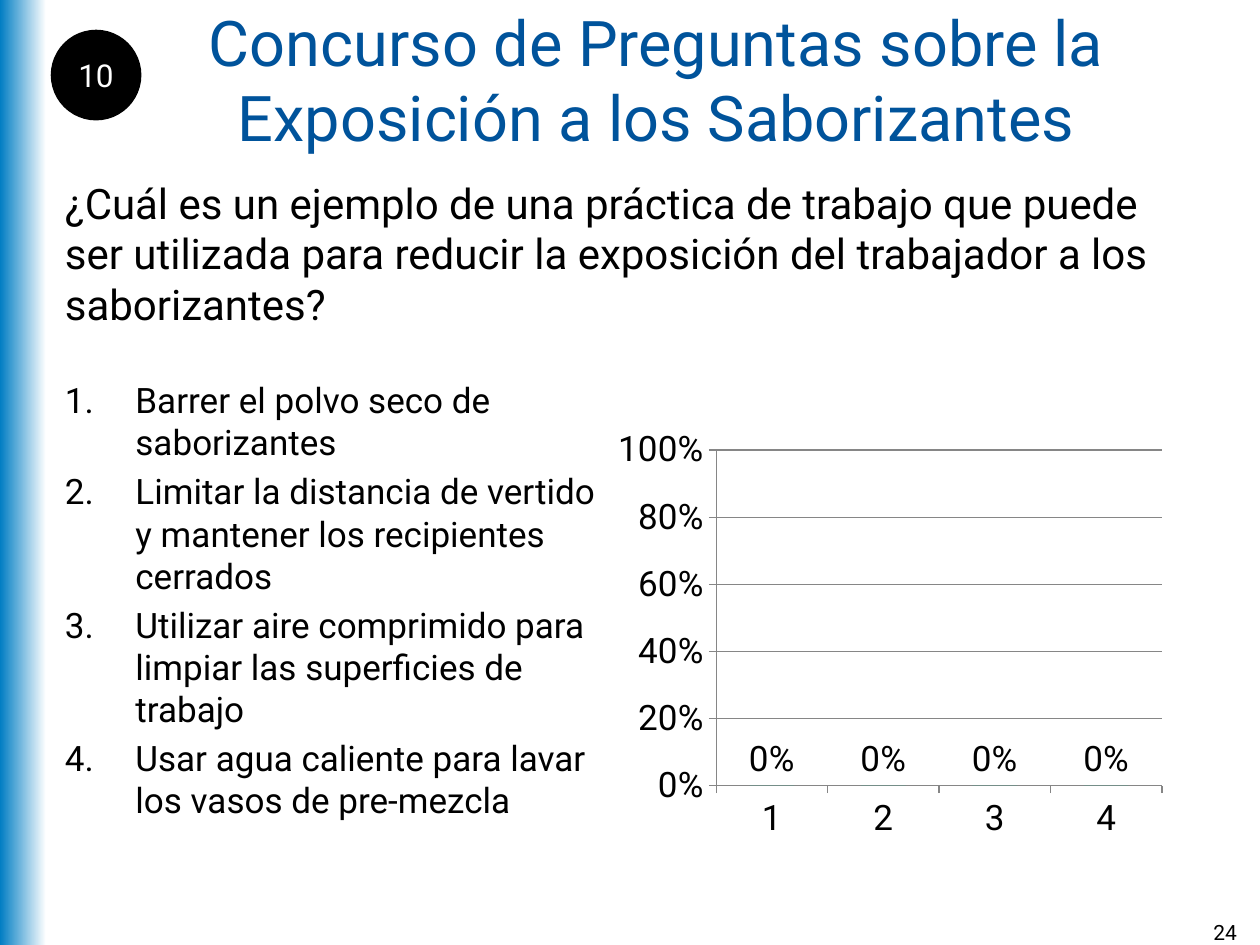
import pptx
import pptx.chart.data
import pptx.dml.color
import pptx.enum.chart
import pptx.enum.shapes
import pptx.enum.text
import pptx.oxml
import pptx.oxml.ns
import pptx.util

COLS, ROWS = 24, 18
FONT = "Roboto"
BLACK, WHITE, GREY = "000000", "FFFFFF", "868686"
SKY, NAVY, GREEN = "007DC3", "00539B", "00CC99"
ALIGN = pptx.enum.text.PP_ALIGN
ANCHOR = pptx.enum.text.MSO_ANCHOR
SHAPE = pptx.enum.shapes.MSO_SHAPE

TITLE = "Concurso de Preguntas sobre la Exposición a los Saborizantes"
QUESTION = (
    "¿Cuál es un ejemplo de una práctica de trabajo que puede ser utilizada "
    "para reducir la exposición del trabajador a los saborizantes?"
)
ANSWERS = [
    "Barrer el polvo seco de saborizantes",
    "Limitar la distancia de vertido y mantener los recipientes cerrados",
    "Utilizar aire comprimido para limpiar las superficies de trabajo",
    "Usar agua caliente para lavar los vasos de pre-mezcla",
]


def rgb(value):
    return pptx.dml.color.RGBColor.from_string(value)


def style_font(font, size, color=BLACK):
    font.name, font.size = FONT, pptx.util.Pt(size)
    font.color.rgb = rgb(color)


def write(tf, text, size=20, color=BLACK, align=ALIGN.LEFT, before=0, first=True):
    p = tf.paragraphs[0] if first else tf.add_paragraph()
    p.alignment, p.space_before = align, pptx.util.Pt(before)
    r = p.add_run()
    r.text = text
    style_font(r.font, size, color)
    return p


class Deck:
    def __init__(self, width=10, height=7.5):
        self.prs = pptx.Presentation()
        self.prs.slide_width = pptx.util.Inches(width)
        self.prs.slide_height = pptx.util.Inches(height)
        self.s = self.prs.slides.add_slide(self.prs.slide_layouts[6])

    def box(self, col, row, cols, rows):
        dx, dy = self.prs.slide_width / COLS, self.prs.slide_height / ROWS
        return [round(v) for v in (col * dx, row * dy, cols * dx, rows * dy)]

    def shape(self, kind, *area):
        sp = self.s.shapes.add_shape(kind, *self.box(*area))
        sp.shadow.inherit = False
        return sp

    def band(self, *area, start, end):
        sp = self.shape(SHAPE.RECTANGLE, *area)
        sp.line.fill.background()
        sp.fill.gradient()
        sp.fill.gradient_angle = 0
        for stop, position, color in zip(sp.fill.gradient_stops, (0, 1), (start, end)):
            stop.position, stop.color.rgb = position, rgb(color)

    def badge(self, *area, text):
        sp = self.shape(SHAPE.OVAL, *area)
        sp.fill.solid()
        sp.fill.fore_color.rgb = sp.line.color.rgb = rgb(BLACK)
        sp.line.width = pptx.util.Pt(2)
        tf = sp.text_frame
        tf.margin_left = tf.margin_right = tf.margin_top = tf.margin_bottom = 0
        tf.word_wrap, tf.vertical_anchor = False, ANCHOR.MIDDLE
        write(tf, text, size=18, color=WHITE, align=ALIGN.CENTER)

    def text_frame(self, *area, anchor=ANCHOR.TOP):
        tf = self.s.shapes.add_textbox(*self.box(*area)).text_frame
        tf.word_wrap, tf.vertical_anchor = True, anchor
        return tf

    def text(self, *area, text, anchor=ANCHOR.TOP, **kw):
        write(self.text_frame(*area, anchor=anchor), text, **kw)

    def numbered(self, *area, items, indent=0.56, **kw):
        tf = self.text_frame(*area)
        for i, item in enumerate(items):
            p_pr = write(tf, item, first=i == 0, **kw)._p.get_or_add_pPr()
            p_pr.set("marL", str(pptx.util.Inches(indent)))
            p_pr.set("indent", str(pptx.util.Inches(-indent)))
            bullet = pptx.oxml.parse_xml(
                f'<a:buAutoNum {pptx.oxml.ns.nsdecls("a")} type="arabicPeriod"/>'
            )
            p_pr.append(bullet)

    def percent_chart(self, *area, cats, vals, plot):
        data = pptx.chart.data.CategoryChartData(number_format="0%")
        data.categories = cats
        data.add_series("Series 1", vals)
        kind = pptx.enum.chart.XL_CHART_TYPE.COLUMN_CLUSTERED
        chart = self.s.shapes.add_chart(kind, *self.box(*area), data).chart
        chart.has_title = chart.has_legend = False
        style_font(chart.font, 20)
        for axis in (chart.category_axis, chart.value_axis):
            axis.major_tick_mark = pptx.enum.chart.XL_TICK_MARK.OUTSIDE
            axis.format.line.color.rgb = rgb(GREY)
        axis = chart.value_axis
        axis.minimum_scale, axis.maximum_scale, axis.major_unit = 0, 1, 0.2
        axis.has_major_gridlines = True
        axis.major_gridlines.format.line.color.rgb = rgb(GREY)
        axis.tick_labels.number_format = "0%"
        axis.tick_labels.number_format_is_linked = False
        bars = chart.plots[0]
        bars.gap_width, bars.vary_by_categories = 150, False
        series = bars.series[0]
        series.format.fill.solid()
        series.format.fill.fore_color.rgb = rgb(GREEN)
        labels = series.data_labels
        labels.show_value = True
        labels.number_format, labels.number_format_is_linked = "0%", False
        labels.position = pptx.enum.chart.XL_LABEL_POSITION.OUTSIDE_END
        style_font(labels.font, 20)
        self.place_plot(chart, plot)

    def place_plot(self, chart, plot):
        sizes = "".join(f'<c:{k} val="{v}"/>' for k, v in zip("xywh", plot))
        layout = pptx.oxml.parse_xml(
            f'<c:layout {pptx.oxml.ns.nsdecls("c")}><c:manualLayout>'
            '<c:layoutTarget val="inner"/><c:xMode val="edge"/><c:yMode val="edge"/>'
            f"{sizes}</c:manualLayout></c:layout>"
        )
        area = chart._chartSpace.chart.plotArea
        for old in area.findall(pptx.oxml.ns.qn("c:layout")):
            area.remove(old)
        area.insert(0, layout)


def main():
    deck = Deck()
    deck.band(0, 0, 0.88, ROWS, start=SKY, end=WHITE)
    deck.text(1, 0, 23, 3, text=TITLE, size=36, color=NAVY,
              align=ALIGN.CENTER, anchor=ANCHOR.MIDDLE)
    deck.text(22.6, 17.4, 1.2, 0.6, text="24", size=12, align=ALIGN.RIGHT)
    deck.text(1, 3.26, 22, 1.8, text=QUESTION, size=24, before=4.8)
    deck.numbered(1, 7.1, 10.75, 10, items=ANSWERS, size=20, before=4)
    deck.badge(1, 0.6, 1.66, 1.66, text="10")
    deck.percent_chart(11.6, 8, 10.75, 8.2, cats=["1", "2", "3", "4"],
                       vals=[0] * 4, plot=(0.19, 0.07, 0.79, 0.78))
    deck.prs.save("out.pptx")


if __name__ == "__main__":
    main()
